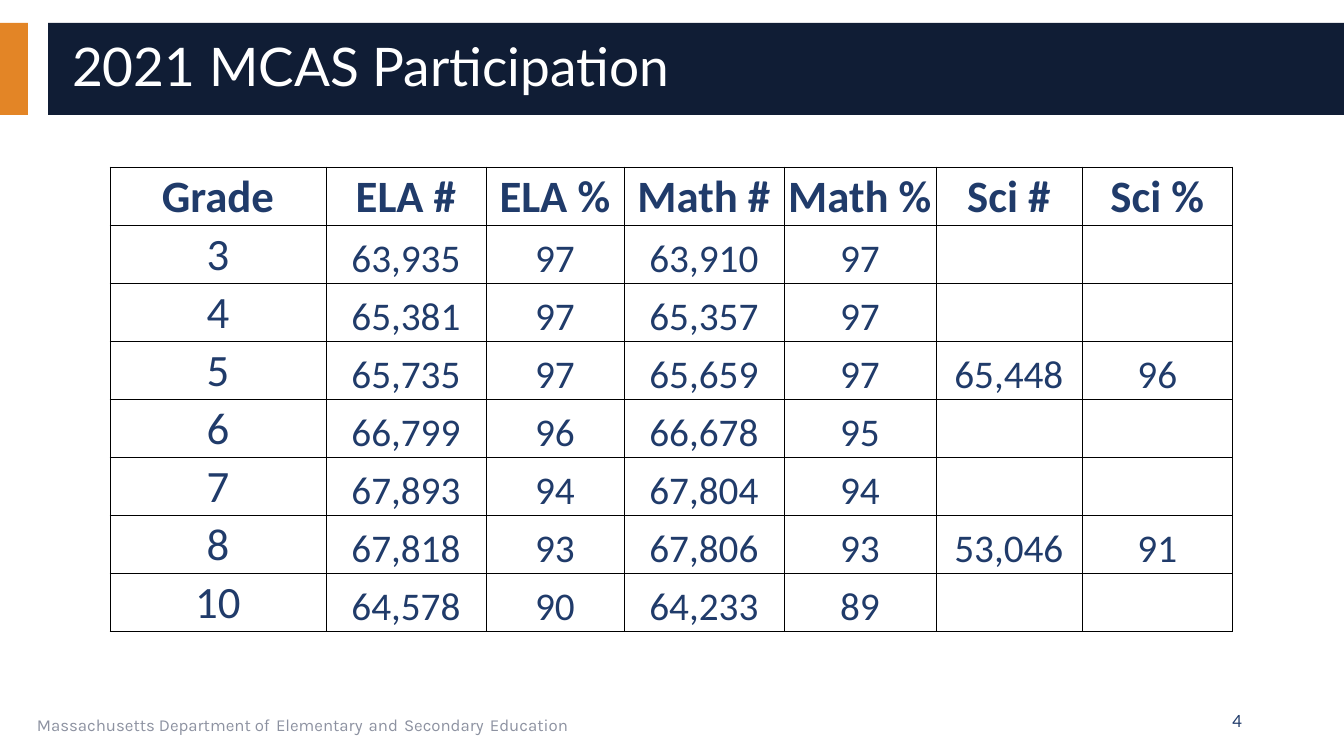
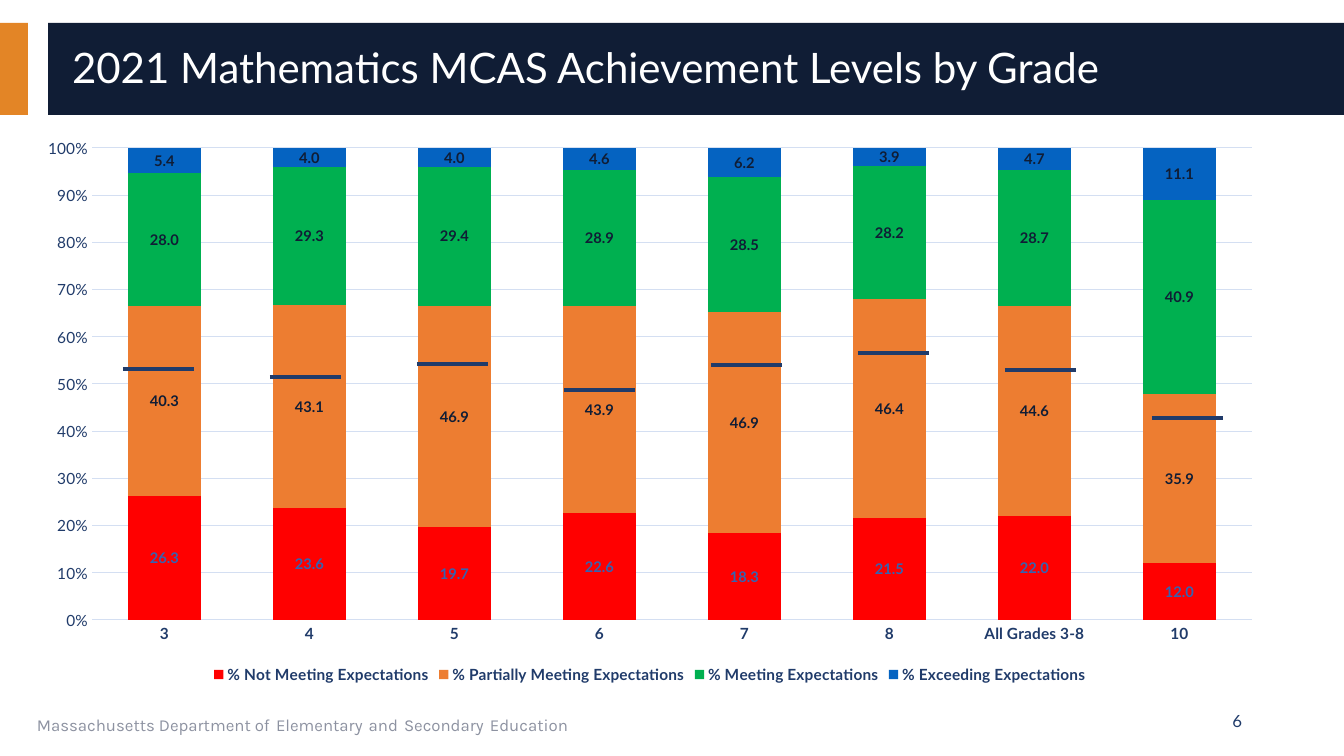
from lxml import etree
from pptx import Presentation, oxml
from pptx import util as u
from pptx.chart import data
from pptx.dml.color import RGBColor
from pptx.enum import chart as ch, shapes, text
from pptx.oxml import ns

# Colours and fonts
WHITE = RGBColor(0xFF, 0xFF, 0xFF)
BLACK = RGBColor(0, 0, 0)
ORANGE = RGBColor(0xE3, 0x85, 0x26)
NAVY = RGBColor(0x10, 0x1D, 0x35)
BLUE = RGBColor(0x20, 0x3B, 0x6A)
GREY = RGBColor(0x8D, 0x92, 0xA1)
PALE = RGBColor(0xD4, 0xDF, 0xF2)
MID = RGBColor(0x36, 0x63, 0xB1)
RED = RGBColor(0xFF, 0, 0)
AMBER = RGBColor(0xED, 0x7D, 0x31)
GREEN = RGBColor(0, 0xB0, 0x50)
AZURE = RGBColor(0x05, 0x63, 0xC1)
LATO, KARLA, CALIBRI = "Lato", "Karla", "Calibri"

# Shared content
BANDS = [((0, 23, 28, 92), ORANGE), ((48, 23, 1296, 92), NAVY)]
FOOTER = ["Massachusetts Department of", "Elementary", "and", "Secondary", "Education"]

# Participation table
HEADS = ["Grade", "ELA #", "ELA %", "Math #", "Math %", "Sci #", "Sci %"]
ROWS = [
    ("3", "63,935", "97", "63,910", "97", "", ""),
    ("4", "65,381", "97", "65,357", "97", "", ""),
    ("5", "65,735", "97", "65,659", "97", "65,448", "96"),
    ("6", "66,799", "96", "66,678", "95", "", ""),
    ("7", "67,893", "94", "67,804", "94", "", ""),
    ("8", "67,818", "93", "67,806", "93", "53,046", "91"),
    ("10", "64,578", "90", "64,233", "89", "", ""),
]
COLS = [216, 160, 138, 160, 152, 146, 151]
ROW_H = 58

# Achievement chart: name, fill, label colour, values
GRADES = ["3", "4", "5", "6", "7", "8", "All Grades 3-8", "10"]
LEVELS = [
    ("% Not Meeting Expectations", RED, MID,
     (26.3, 23.6, 19.7, 22.6, 18.3, 21.5, 22, 12)),
    ("% Partially Meeting Expectations", AMBER, NAVY,
     (40.3, 43.1, 46.9, 43.9, 46.9, 46.4, 44.6, 35.9)),
    ("% Meeting Expectations", GREEN, NAVY,
     (28, 29.3, 29.4, 28.9, 28.5, 28.2, 28.7, 40.9)),
    ("% Exceeding Expectations", AZURE, NAVY,
     (5.4, 4, 4, 4.6, 6.2, 3.9, 4.7, 11.1)),
]
CHART = (23, 127, 1254, 561)
PLOT = (92, 148, 1160, 472)
MARKS = [369, 377, 364, 390, 365, 353, 370, 418]
MARK_X, MARK_W, MARK_GAP = 123, 71, 147


def px(n):
    return u.Emu(round(n * 914400 / 100.8))


def box(at):
    return [px(n) for n in at]


def style(font, size, color, face=LATO, bold=False):
    font.size, font.name, font.bold = u.Pt(size), face, bold
    font.color.rgb = color


def add_run(para, words, *look):
    run = para.add_run()
    run.text = words
    style(run.font, *look)


def add_text(slide, at, anchor):
    shape = slide.shapes.add_textbox(*box(at))
    frame = shape.text_frame
    frame.word_wrap = True
    frame.vertical_anchor = anchor
    return shape, frame.paragraphs[0]


def dress(layout, slide):
    """Draw the bands and footer, then move them to the layout."""
    parts = []
    for at, color in BANDS:
        band = slide.shapes.add_shape(shapes.MSO_SHAPE.RECTANGLE, *box(at))
        band.shadow.inherit = False
        band.fill.solid()
        band.fill.fore_color.rgb = color
        band.line.fill.background()
        parts.append(band)
    foot, para = add_text(slide, (27, 701, 851, 40), text.MSO_ANCHOR.TOP)
    for i, words in enumerate(FOOTER):
        if i:
            add_run(para, " ", 18, BLUE, KARLA)
        add_run(para, words, 12, GREY, KARLA)
    parts.append(foot)
    for i, part in enumerate(parts):
        part._element.nvSpPr.cNvPr.set("id", str(20 + i))
        layout.shapes._spTree.insert(2 + i, part._element)


def head(slide, words, size, number):
    title = slide.shapes.title
    title.left, title.top, title.width, title.height = box((62, 32, 1254, 75))
    frame = title.text_frame
    frame.auto_size = text.MSO_AUTO_SIZE.NONE
    frame.vertical_anchor = text.MSO_ANCHOR.MIDDLE
    para = frame.paragraphs[0]
    para.alignment, para.line_spacing = text.PP_ALIGN.LEFT, 0.9
    add_run(para, words, size, WHITE)
    _, para = add_text(slide, (950, 701, 302, 40), text.MSO_ANCHOR.MIDDLE)
    para.alignment = text.PP_ALIGN.RIGHT
    add_run(para, number, 12, BLUE)


def border(cell):
    props = cell._tc.get_or_add_tcPr()
    for side in ("a:lnL", "a:lnR", "a:lnT", "a:lnB"):
        line = etree.SubElement(props, ns.qn(side), w=str(u.Pt(0.5)))
        fill = etree.SubElement(line, ns.qn("a:solidFill"))
        etree.SubElement(fill, ns.qn("a:srgbClr"), val=str(BLACK))


def add_table(slide):
    rows = [HEADS] + ROWS
    at = (110, 167, sum(COLS), ROW_H * len(rows))
    table = slide.shapes.add_table(len(rows), len(COLS), *box(at)).table
    table.first_row = table.horz_banding = False
    for col, width in zip(table.columns, COLS):
        col.width = px(width)
    for r, row in enumerate(rows):
        table.rows[r].height = px(ROW_H)
        for c, words in enumerate(row):
            cell = table.cell(r, c)
            border(cell)
            cell.fill.background()
            cell.margin_left = cell.margin_right = cell.margin_top = px(1)
            cell.margin_bottom = 0
            cell.vertical_anchor = text.MSO_ANCHOR.BOTTOM
            if words:
                para = cell.text_frame.paragraphs[0]
                para.alignment = text.PP_ALIGN.CENTER
                size = 32 if r == 0 or c == 0 else 28
                add_run(para, words, size, BLUE, CALIBRI, r == 0)


def place_plot(chart):
    """Fix the inner plot area as fractions of the chart."""
    area = chart._chartSpace.chart.plotArea
    for old in area.findall(ns.qn("c:layout")):
        area.remove(old)
    layout = oxml.parse_xml("<c:layout %s/>" % ns.nsdecls("c"))
    manual = etree.SubElement(layout, ns.qn("c:manualLayout"))
    left, top, width, height = CHART
    x, y, w, h = PLOT
    parts = [("layoutTarget", "inner"), ("xMode", "edge"), ("yMode", "edge"),
             ("x", (x - left) / width), ("y", (y - top) / height),
             ("w", w / width), ("h", h / height)]
    for name, val in parts:
        etree.SubElement(manual, ns.qn("c:" + name), val=str(val))
    area.insert(0, layout)


def add_chart(slide):
    info = data.CategoryChartData(number_format="0.0")
    info.categories = GRADES
    for name, _, _, vals in LEVELS:
        info.add_series(name, vals)
    kind = ch.XL_CHART_TYPE.COLUMN_STACKED_100
    chart = slide.shapes.add_chart(kind, *box(CHART), info).chart
    style(chart.font, 10, BLUE)
    chart.has_title = False
    chart.has_legend = True
    chart.legend.position = ch.XL_LEGEND_POSITION.BOTTOM
    chart.legend.include_in_layout = False
    style(chart.legend.font, 11, BLUE, LATO, True)

    # Axes
    cat, val = chart.category_axis, chart.value_axis
    for axis in (cat, val):
        axis.major_tick_mark = axis.minor_tick_mark = ch.XL_TICK_MARK.NONE
        style(axis.tick_labels.font, 11, BLUE, LATO, axis is cat)
    val.has_major_gridlines = True
    for line in (cat.format.line, val.major_gridlines.format.line):
        line.color.rgb, line.width = PALE, u.Pt(0.75)
    val.format.line.fill.background()
    val.tick_labels.number_format = "0%"
    val.tick_labels.number_format_is_linked = False

    # Columns
    plot = chart.plots[0]
    plot.gap_width, plot.overlap = 100, 100
    plot.vary_by_categories = False
    for series, (_, color, ink, _) in zip(plot.series, LEVELS):
        series.format.fill.solid()
        series.format.fill.fore_color.rgb = color
        labels = series.data_labels
        labels.show_value = True
        labels.number_format, labels.number_format_is_linked = "0.0", False
        style(labels.font, 10.5, ink, LATO, True)
    place_plot(chart)


def add_marks(slide):
    for i, y in enumerate(MARKS):
        x = MARK_X + i * MARK_GAP
        ends = box((x, y, x + MARK_W, y))
        mark = slide.shapes.add_connector(shapes.MSO_CONNECTOR.STRAIGHT, *ends)
        mark.line.color.rgb, mark.line.width = BLUE, u.Pt(2.5)
        etree.SubElement(mark._element.spPr, ns.qn("a:effectLst"))


def main():
    deck = Presentation()
    deck.slide_width, deck.slide_height = px(1344), px(756)
    layout = deck.slide_layouts[5]

    # Participation
    slide = deck.slides.add_slide(layout)
    dress(layout, slide)
    head(slide, "2021 MCAS Participation", 38, "4")
    add_table(slide)

    # Achievement levels
    slide = deck.slides.add_slide(layout)
    head(slide, "2021 Mathematics MCAS Achievement Levels by Grade", 30, "6")
    add_chart(slide)
    add_marks(slide)

    deck.save("out.pptx")


if __name__ == "__main__":
    main()
